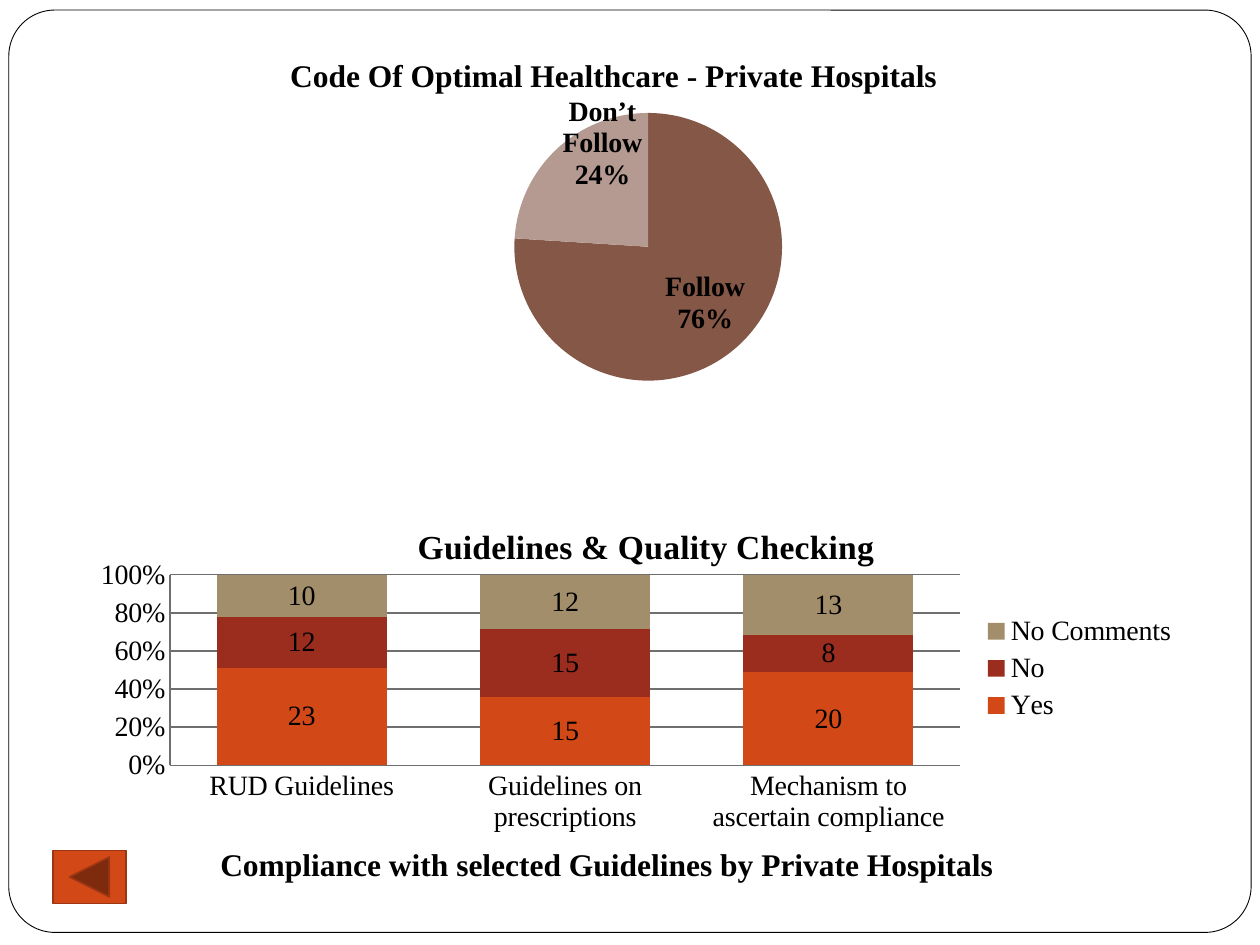
"""Build the private hospitals guideline compliance slide."""
import pptx
import pptx.chart.data
import pptx.dml.color
import pptx.enum.chart
import pptx.enum.shapes
import pptx.enum.text
import pptx.oxml
import pptx.oxml.ns
import pptx.util

Inches = pptx.util.Inches
Pt = pptx.util.Pt
XL = pptx.enum.chart
SHAPE = pptx.enum.shapes.MSO_SHAPE
FONT = "Times New Roman"
COLORS = {
    "black": "000000", "white": "FFFFFF", "grid": "6F6F6F",
    "follow": "855747", "dont_follow": "B59A92",
    "yes": "D34817", "no": "9B2D1F", "no_comments": "A28E6A",
    "button_line": "9C3511",
}


def rgb(name):
    return pptx.dml.color.RGBColor.from_string(COLORS[name])


def format_font(font, size, bold=False, color="black"):
    font.name, font.size, font.bold = FONT, Pt(size), bold
    font.color.rgb = rgb(color)


def add_text(slide, text, box, size=18, bold=False, color="black",
             align=pptx.enum.text.PP_ALIGN.JUSTIFY):
    tf = slide.shapes.add_textbox(*map(Inches, box)).text_frame
    tf.word_wrap = True
    p = tf.paragraphs[0]
    p.alignment = align
    r = p.add_run()
    r.text = text
    format_font(r.font, size, bold, color)


def add_shape(slide, kind, box, fill, line, width):
    sp = slide.shapes.add_shape(kind, *map(Inches, box))
    sp.shadow.inherit = False
    sp.fill.solid()
    sp.fill.fore_color.rgb = rgb(fill)
    sp.line.color.rgb = rgb(line)
    sp.line.width = Pt(width)
    return sp


def make_layout(x, y, w=None, h=None):
    tags = [("xMode", "edge"), ("yMode", "edge"), ("x", x), ("y", y)]
    if w is not None:
        tags = [("layoutTarget", "inner")] + tags + [("w", w), ("h", h)]
    body = "".join(f'<c:{tag} val="{val}"/>' for tag, val in tags)
    return pptx.oxml.parse_xml(
        f'<c:layout {pptx.oxml.ns.nsdecls("c")}><c:manualLayout>{body}'
        "</c:manualLayout></c:layout>")


def set_layout(parent, layout, after=None):
    for old in parent.findall(pptx.oxml.ns.qn("c:layout")):
        parent.remove(old)
    before = parent.find(pptx.oxml.ns.qn(after)) if after else None
    parent.insert(0 if before is None else parent.index(before) + 1, layout)


def add_chart(slide, kind, box, categories, series, title, title_size,
              title_at, plot_at, size):
    data = pptx.chart.data.CategoryChartData()
    data.categories = categories
    for name, values in series:
        data.add_series(name, values)
    chart = slide.shapes.add_chart(kind, *map(Inches, box), data).chart
    format_font(chart.font, size)
    chart.has_title = True
    tf = chart.chart_title.text_frame
    tf.text = title
    format_font(tf.paragraphs[0].runs[0].font, title_size, True)
    chart.chart_title.include_in_layout = False
    set_layout(chart.chart_title._element, make_layout(*title_at), "c:tx")
    set_layout(chart.plots[0]._element.getparent(), make_layout(*plot_at))
    return chart


def add_pie_label(point, dx, dy):
    label = point.data_label
    format_font(label.font, 16, True)
    label.position = XL.XL_LABEL_POSITION.CENTER
    d_lbl = label._dLbl
    for tag, val in (("showVal", "0"), ("showCatName", "1"), ("showPercent", "1")):
        d_lbl.find(pptx.oxml.ns.qn(f"c:{tag}")).set("val", val)
    layout = make_layout(dx, dy)
    for mode in ("xMode", "yMode"):
        layout[0].remove(layout[0].find(pptx.oxml.ns.qn(f"c:{mode}")))
    set_layout(d_lbl, layout, "c:idx")
    d_lbl.append(pptx.oxml.parse_xml(
        f'<c:separator {pptx.oxml.ns.nsdecls("c")}>\n</c:separator>'))


def add_follow_pie(slide):
    chart = add_chart(
        slide, XL.XL_CHART_TYPE.PIE, (0.42, 0.25, 8.75, 3.08),
        ["Follow", "Don’t Follow"], [("Series 1", (76, 24))],
        "Code Of Optimal Healthcare - Private Hospitals", 18,
        (0.21, 0.05), (0.08, 0.21, 0.92, 0.69), 10)
    chart.has_legend = False
    chart.plots[0].vary_by_categories = True
    points = chart.plots[0].series[0].points
    slices = (("follow", 0.01, 0.02), ("dont_follow", 0, -0.14))
    for i, (color, dx, dy) in enumerate(slices):
        fill = points[i].format.fill
        fill.solid()
        fill.fore_color.rgb = rgb(color)
        add_pie_label(points[i], dx, dy)


def add_guideline_columns(slide):
    chart = add_chart(
        slide, XL.XL_CHART_TYPE.COLUMN_STACKED_100, (0.74, 3.93, 8.71, 2.75),
        ["RUD Guidelines", "Guidelines on prescriptions",
         "Mechanism to ascertain compliance"],
        [("Yes", (23, 15, 20)), ("No", (12, 15, 8)), ("No Comments", (10, 12, 13))],
        "Guidelines & Quality Checking", 19.2,
        (0.29, 0.07), (0.07, 0.23, 0.72, 0.55), 16)
    plot = chart.plots[0]
    plot.gap_width, plot.overlap = 55, 100
    plot.vary_by_categories = False
    for series, color in zip(plot.series, ("yes", "no", "no_comments")):
        series.format.fill.solid()
        series.format.fill.fore_color.rgb = rgb(color)
        labels = series.data_labels
        labels.show_value = True
        labels.position = XL.XL_LABEL_POSITION.CENTER
        format_font(labels.font, 16)
    for axis in (chart.category_axis, chart.value_axis):
        axis.major_tick_mark = axis.minor_tick_mark = XL.XL_TICK_MARK.NONE
        axis.format.line.color.rgb = rgb("grid")
        format_font(axis.tick_labels.font, 16)
    axis = chart.value_axis
    axis.minimum_scale, axis.maximum_scale, axis.major_unit = 0, 1, 0.2
    axis.tick_labels.number_format = "0%"
    axis.tick_labels.number_format_is_linked = False
    axis.major_gridlines.format.line.color.rgb = rgb("grid")
    chart.has_legend = True
    chart.legend.position = XL.XL_LEGEND_POSITION.RIGHT
    chart.legend.include_in_layout = False
    format_font(chart.legend.font, 16)


def main():
    prs = pptx.Presentation()
    prs.slide_width, prs.slide_height = Inches(10), Inches(7.5)
    slide = prs.slides.add_slide(prs.slide_layouts[6])
    frame = add_shape(slide, SHAPE.ROUNDED_RECTANGLE, (0.07, 0.08, 9.86, 7.32),
                      "white", "black", 0.5)
    frame.adjustments[0] = 0.05
    add_text(slide, "Compliance with selected Guidelines by Private Hospitals",
             (1.65, 6.66, 6.83, 0.4), bold=True)
    add_shape(slide, SHAPE.ACTION_BUTTON_BACK_OR_PREVIOUS,
              (0.42, 6.75, 0.58, 0.42), "yes", "button_line", 1)
    add_follow_pie(slide)
    add_guideline_columns(slide)
    prs.save("out.pptx")


if __name__ == "__main__":
    main()
